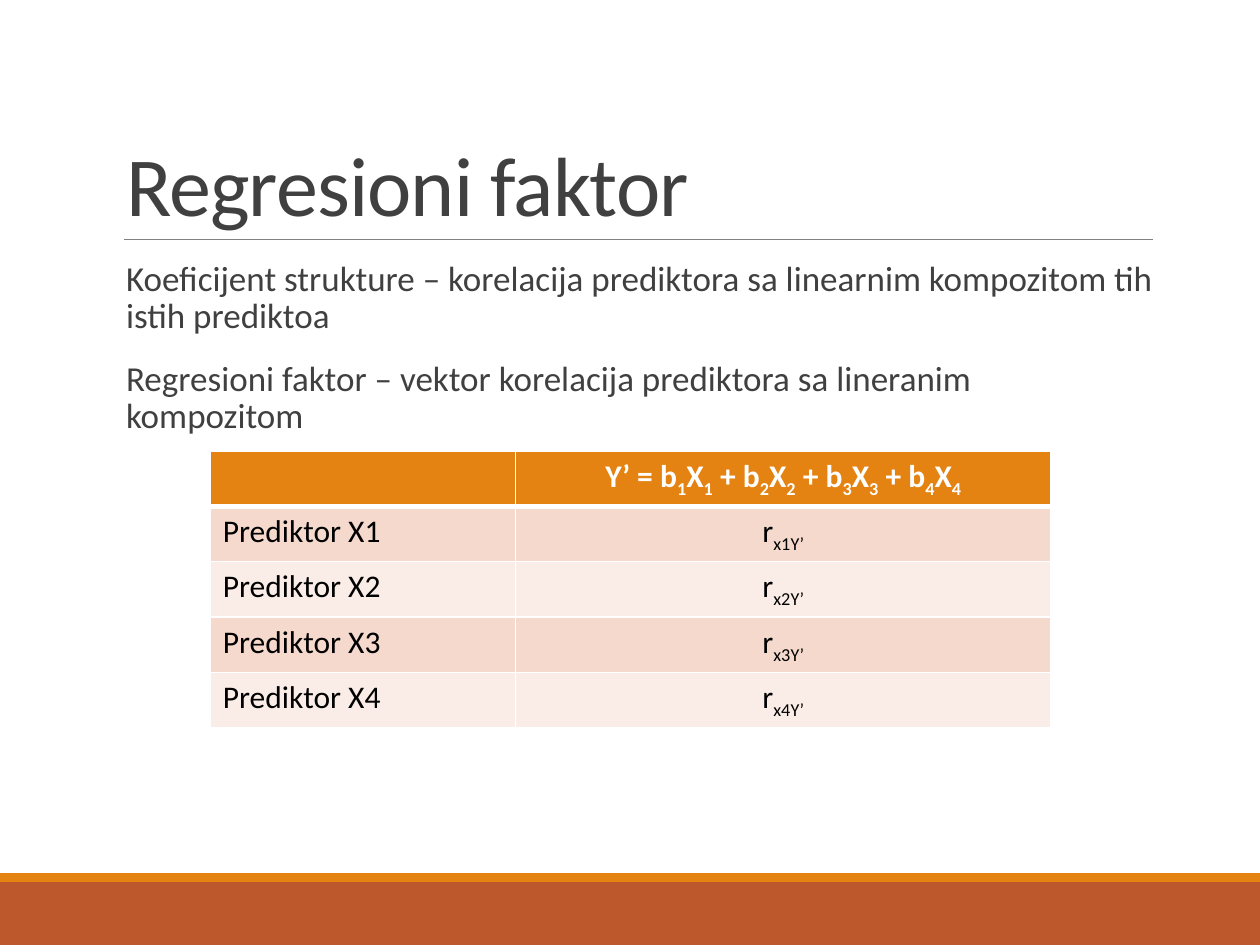
from lxml import etree
from pptx import Presentation, util as u
from pptx.dml.color import RGBColor
from pptx.enum import shapes, text
from pptx.oxml import ns

ORANGE = RGBColor(0xE4, 0x83, 0x12)
RUST = RGBColor(0xBD, 0x58, 0x2C)
GREY = RGBColor(0x80, 0x80, 0x80)
DARK = RGBColor(0x40, 0x40, 0x40)
BLACK = RGBColor(0, 0, 0)
WHITE = RGBColor(0xFF, 0xFF, 0xFF)
BANDS = RGBColor(0xF5, 0xD9, 0xCC), RGBColor(0xFA, 0xED, 0xE7)


def add_xml(parent, tag, **attributes):
    return etree.SubElement(parent, ns.qn(tag), attributes)


class SlideBuilder:
    font = "Calibri"

    def __init__(self, slide):
        self.slide = slide

    def bar(self, top, height, color):
        shape = self.slide.shapes.add_shape(
            shapes.MSO_SHAPE.RECTANGLE, 0, u.Cm(top), u.Cm(25.4), u.Cm(height))
        shape.shadow.inherit = False
        shape.fill.solid()
        shape.fill.fore_color.rgb = color
        shape.line.fill.background()

    def rule(self, left, right, top):
        line = self.slide.shapes.add_connector(
            shapes.MSO_CONNECTOR.STRAIGHT, u.Cm(left), u.Cm(top), u.Cm(right), u.Cm(top))
        line.line.color.rgb = GREY
        line.line.width = u.Pt(0.5)
        add_xml(line._element.spPr, "a:effectLst")

    def run(self, paragraph, words, size, color, bold=False, **attributes):
        run = paragraph.add_run()
        run.text = words
        run.font.name = self.font
        run.font.size = u.Pt(size)
        run.font.bold = bold
        run.font.color.rgb = color
        properties = run._r.get_or_add_rPr()
        for name, value in attributes.items():
            properties.set(name, value)

    def place(self, shape, left, top, width, height, anchor):
        shape.left, shape.top = u.Cm(left), u.Cm(top)
        shape.width, shape.height = u.Cm(width), u.Cm(height)
        frame = shape.text_frame
        frame.auto_size = text.MSO_AUTO_SIZE.NONE
        frame.word_wrap = True
        frame.vertical_anchor = anchor
        return frame

    def title(self, words):
        frame = self.place(self.slide.shapes.title, 2.29, 0.79, 20.96, 4.04,
                           text.MSO_ANCHOR.BOTTOM)
        paragraph = frame.paragraphs[0]
        paragraph.alignment = text.PP_ALIGN.LEFT
        paragraph.line_spacing = 0.85
        self.run(paragraph, words, 48, DARK, spc="-50")

    def body(self, items):
        frame = self.place(self.slide.placeholders[1], 2.29, 5.13, 20.96, 11.18,
                           text.MSO_ANCHOR.TOP)
        frame.margin_left = frame.margin_right = 0
        for index, words in enumerate(items):
            paragraph = frame.add_paragraph() if index else frame.paragraphs[0]
            paragraph.line_spacing = 0.9
            paragraph.space_before, paragraph.space_after = u.Pt(12), u.Pt(2)
            properties = paragraph._p.get_or_add_pPr()
            properties.set("marL", str(u.Cm(0.25)))
            properties.set("indent", str(-u.Cm(0.25)))
            bullet_color = add_xml(properties, "a:buClr")
            add_xml(bullet_color, "a:srgbClr", val=str(ORANGE))
            add_xml(properties, "a:buChar", char=" ")
            self.run(paragraph, words, 20, DARK)

    def cell(self, cell, parts, fill, color, centred, header):
        """Fill a cell; every second entry of parts is a subscript."""
        properties = cell._tc.get_or_add_tcPr()
        for side in "LRTB":
            width = u.Pt(3 if header and side == "B" else 1)
            border = add_xml(properties, f"a:ln{side}", w=str(width))
            add_xml(add_xml(border, "a:solidFill"), "a:srgbClr", val=str(WHITE))
        cell.fill.solid()
        cell.fill.fore_color.rgb = fill
        paragraph = cell.text_frame.paragraphs[0]
        paragraph.alignment = text.PP_ALIGN.CENTER if centred else text.PP_ALIGN.LEFT
        for index, words in enumerate(parts):
            baseline = {"baseline": "-25000"} if index % 2 else {}
            self.run(paragraph, words, 18, color, header, **baseline)

    def table(self, left, top, widths, row_height, rows):
        table = self.slide.shapes.add_table(
            len(rows), len(widths), u.Cm(left), u.Cm(top),
            u.Cm(sum(widths)), u.Cm(row_height * len(rows))).table
        for column, width in zip(table.columns, widths):
            column.width = u.Cm(width)
        for i, row in enumerate(rows):
            header = i == 0
            fill = ORANGE if header else BANDS[(i - 1) % 2]
            for j, parts in enumerate(row):
                self.cell(table.cell(i, j), parts, fill,
                          WHITE if header else BLACK, j == 1, header)


def main():
    presentation = Presentation()
    presentation.slide_width, presentation.slide_height = u.Cm(25.4), u.Cm(19.05)
    builder = SlideBuilder(presentation.slides.add_slide(presentation.slide_layouts[1]))

    builder.bar(17.78, 1.27, RUST)
    builder.bar(17.6, 0.18, ORANGE)
    builder.rule(2.49, 23.24, 4.83)
    builder.title("Regresioni faktor")
    builder.body([
        "Koeficijent strukture – korelacija prediktora sa linearnim kompozitom tih istih prediktoa",
        "Regresioni faktor – vektor korelacija prediktora sa lineranim kompozitom",
    ])

    predictors = "1234"
    equation = []
    for number in predictors:
        equation += [" + b" if equation else "Y’ = b", number, "X", number]
    rows = [([], equation)]
    rows += [([f"Prediktor X{n}"], ["r", f"x{n}Y’"]) for n in predictors]
    builder.table(4.24, 9.09, [6.15, 10.8], 1.03, rows)

    presentation.save("out.pptx")


if __name__ == "__main__":
    main()
